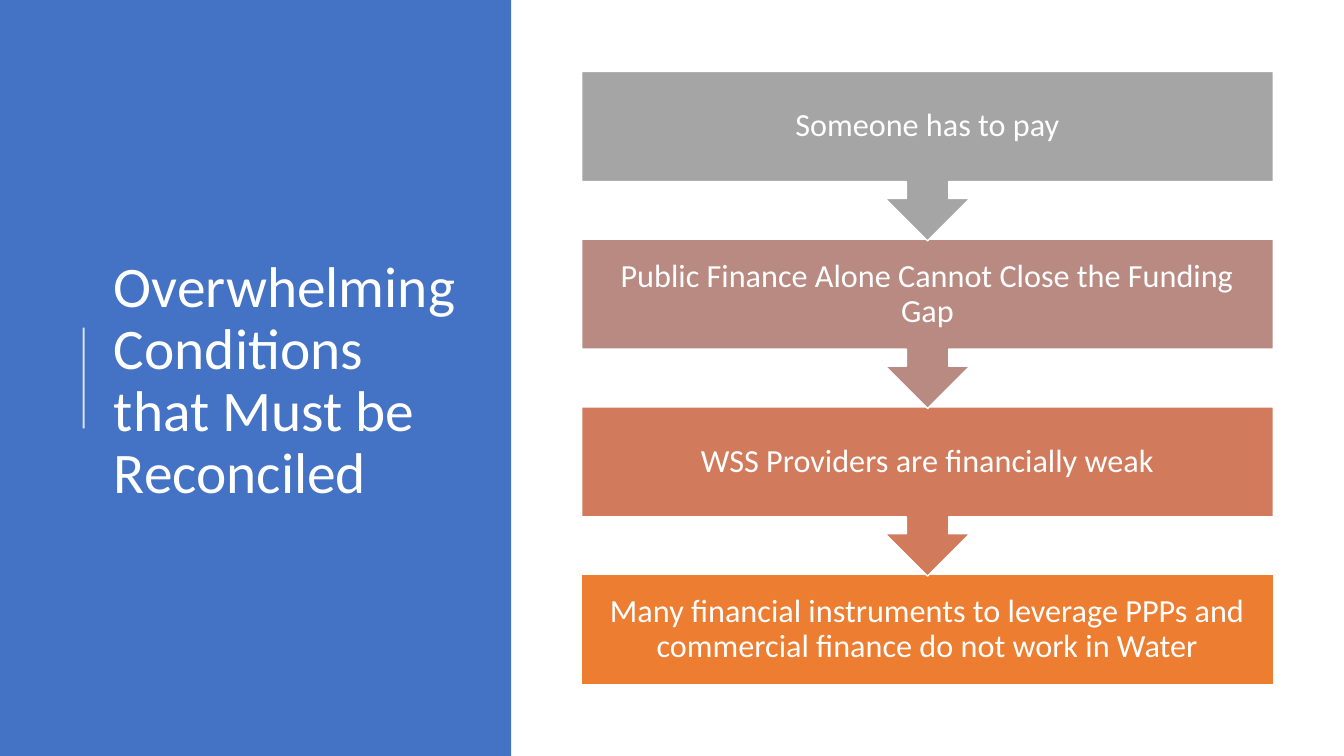
"""Build a slide with a title panel and a downward chain of four conditions."""
from dataclasses import dataclass

from lxml.etree import SubElement
from pptx import Presentation
from pptx.dml.color import RGBColor
from pptx.enum.shapes import MSO_CONNECTOR as Connector, MSO_SHAPE as Shape
from pptx.enum.text import MSO_ANCHOR as Anchor, PP_ALIGN as Align
from pptx.oxml.ns import qn
from pptx.util import Inches, Pt

TITLE = "Overwhelming Conditions\vthat Must be Reconciled"
CONDITIONS = [
    ("Someone has to pay", "A5A5A5"),
    ("Public Finance Alone Cannot Close the Funding Gap", "B98A82"),
    ("WSS Providers are financially weak", "D17B5C"),
    ("Many financial instruments to leverage PPPs and commercial finance "
     "do not work in Water", "ED7D31"),
]


@dataclass(frozen=True)
class Theme:
    font: str = "Calibri"
    panel: str = "4472C4"
    white: str = "FFFFFF"
    title_size: int = 41
    step_size: int = 23


THEME = Theme()
PAGE_WIDTH, PAGE_HEIGHT = 13.33, 7.5
PANEL_WIDTH = 5.07
STEP_LEFT, STEP_TOP, STEP_WIDTH = 5.77, 0.71, 6.86
BOX_HEIGHT, CALLOUT_HEIGHT, STEP_PITCH = 1.09, 1.68, 1.663


def write(box, text, size, align=Align.LEFT, inset=None):
    """Write one white, vertically centred paragraph into a box."""
    frame = box.text_frame
    frame.word_wrap = True
    frame.vertical_anchor = Anchor.MIDDLE
    if inset is not None:
        frame.margin_left = frame.margin_right = Inches(inset)
        frame.margin_top = frame.margin_bottom = Inches(inset)
    para = frame.paragraphs[0]
    para.text = text
    para.alignment = align
    para.line_spacing = 0.9
    for span in para.runs:
        span.font.name = THEME.font
        span.font.size = Pt(size)
        span.font.color.rgb = RGBColor.from_string(THEME.white)


def add_block(page, kind, place, fill, outline=None):
    """Add a flat filled shape, with a thin outline if a colour is given."""
    block = page.shapes.add_shape(kind, *map(Inches, place))
    block.shadow.inherit = False
    block.fill.solid()
    block.fill.fore_color.rgb = RGBColor.from_string(fill)
    if outline:
        block.line.color.rgb = RGBColor.from_string(outline)
        block.line.width = Pt(1)
    else:
        block.line.fill.background()
    return block


def add_accent(page):
    """Add the translucent rule beside the title."""
    rule = page.shapes.add_connector(
        Connector.STRAIGHT, *map(Inches, (0.83, 4.25, 0.83, 3.25)))
    rule.line.width = Pt(1.5)
    rule.line.color.rgb = RGBColor.from_string(THEME.white)
    properties = rule.element.spPr
    color = next(properties.iter(qn("a:srgbClr")))
    SubElement(color, qn("a:alpha")).set("val", "80000")
    SubElement(properties, qn("a:effectLst"))
    return rule


def add_title(page):
    """Place the title over the panel and its rule."""
    panel = add_block(page, Shape.RECTANGLE, (0, 0, PANEL_WIDTH, PAGE_HEIGHT), THEME.panel)
    rule = add_accent(page)
    title = page.shapes.title
    title.left, title.top, title.width, title.height = map(Inches, (1.03, 0.78, 3.69, 6.02))
    write(title, TITLE, THEME.title_size)
    for backdrop in (panel, rule):
        title.element.addprevious(backdrop.element)


def add_steps(page):
    """Stack the conditions from the bottom up, so each arrow tip lies on top."""
    last = len(CONDITIONS) - 1
    for index, (text, fill) in reversed(list(enumerate(CONDITIONS))):
        kind, height = ((Shape.RECTANGLE, BOX_HEIGHT) if index == last
                        else (Shape.DOWN_ARROW_CALLOUT, CALLOUT_HEIGHT))
        place = (STEP_LEFT, STEP_TOP + index * STEP_PITCH, STEP_WIDTH, height)
        step = add_block(page, kind, place, fill, outline=THEME.white)
        write(step, text, THEME.step_size, align=Align.CENTER, inset=0.18)


def main():
    """Create and save the deck."""
    deck = Presentation()
    deck.slide_width, deck.slide_height = Inches(PAGE_WIDTH), Inches(PAGE_HEIGHT)
    page = deck.slides.add_slide(deck.slide_layouts[5])
    add_title(page)
    add_steps(page)
    deck.save("out.pptx")


if __name__ == "__main__":
    main()
